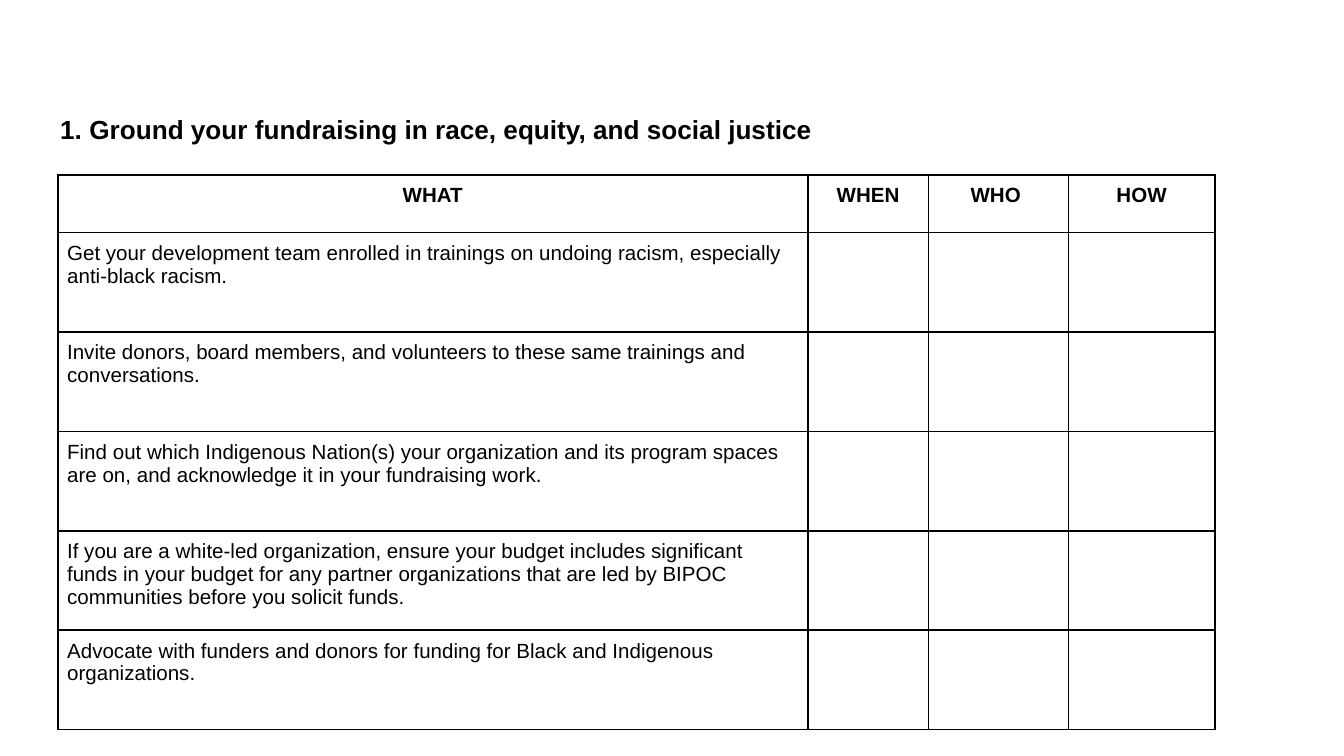
from lxml import etree
from pptx import Presentation
from pptx.dml.color import RGBColor
from pptx.enum.text import MSO_ANCHOR, PP_ALIGN
from pptx.oxml.ns import qn
from pptx.util import Inches, Pt

BLACK = "000000"
COLUMN_WIDTHS = [5.58, 0.9, 1.04, 1.09]
HEADER_HEIGHT = 0.43
ROW_HEIGHT = 0.74
CELL_MARGIN = 0.07
HEADERS = ["WHAT", "WHEN", "WHO ", "HOW"]
ACTIONS = [
    "Get your development team enrolled in trainings on undoing racism, "
    "especially anti-black racism.",
    "Invite donors, board members, and volunteers to these same trainings "
    "and conversations.",
    "Find out which Indigenous Nation(s) your organization and its program "
    "spaces are on, and acknowledge it in your fundraising work.",
    "If you are a white-led organization, ensure your budget includes "
    "significant funds in your budget for any partner organizations that are "
    "led by BIPOC communities before you solicit funds.",
    "Advocate with funders and donors for funding for Black and Indigenous "
    "organizations.",
]


def rgb(color):
    return RGBColor.from_string(color)


def add_run(p, text, size, bold=False):
    r = p.add_run()
    r.text = text
    r.font.name = "Arial"
    r.font.size = Pt(size)
    r.font.bold = bold
    r.font.color.rgb = rgb(BLACK)


def set_borders(cell, color, width):
    tc_pr = cell._tc.get_or_add_tcPr()
    for side in ("lnL", "lnR", "lnT", "lnB"):
        ln = etree.SubElement(tc_pr, qn(f"a:{side}"), w=str(Pt(width)))
        fill = etree.SubElement(ln, qn("a:solidFill"))
        etree.SubElement(fill, qn("a:srgbClr"), val=color)


def format_cell(cell):
    # Borders come before the fill in the cell properties.
    set_borders(cell, BLACK, 1)
    cell.fill.background()
    cell.margin_left = cell.margin_right = Inches(CELL_MARGIN)
    cell.margin_top = cell.margin_bottom = Inches(CELL_MARGIN)


def add_title(slide, x, y, w, h):
    box = slide.shapes.add_textbox(Inches(x), Inches(y), Inches(w), Inches(h))
    tf = box.text_frame
    tf.word_wrap = True
    tf.vertical_anchor = MSO_ANCHOR.MIDDLE
    tf.margin_left = tf.margin_right = Inches(0.1)
    tf.margin_top = tf.margin_bottom = 0
    add_run(tf.paragraphs[0],
            "1. Ground your fundraising in race, equity, and social justice",
            14, bold=True)


def add_action_table(slide, x, y):
    heights = [HEADER_HEIGHT] + [ROW_HEIGHT] * len(ACTIONS)
    frame = slide.shapes.add_table(
        len(heights), len(COLUMN_WIDTHS), Inches(x), Inches(y),
        Inches(sum(COLUMN_WIDTHS)), Inches(sum(heights)))
    table = frame.table
    table.first_row = table.horz_banding = False
    for column, width in zip(table.columns, COLUMN_WIDTHS):
        column.width = Inches(width)
    for row, height in zip(table.rows, heights):
        row.height = Inches(height)
    for cell in table.iter_cells():
        format_cell(cell)
    for col, header in enumerate(HEADERS):
        p = table.cell(0, col).text_frame.paragraphs[0]
        p.alignment = PP_ALIGN.CENTER
        add_run(p, header, 11, bold=True)
    for row, action in enumerate(ACTIONS, start=1):
        add_run(table.cell(row, 0).text_frame.paragraphs[0], action, 11)


def main():
    prs = Presentation()
    prs.slide_width = Inches(10)
    prs.slide_height = prs.slide_width * 9 // 16
    slide = prs.slides.add_slide(prs.slide_layouts[6])
    add_action_table(slide, 0.43, 1.3)
    add_title(slide, 0.35, 0.84, 10.36, 0.24)
    prs.save("out.pptx")


if __name__ == "__main__":
    main()
